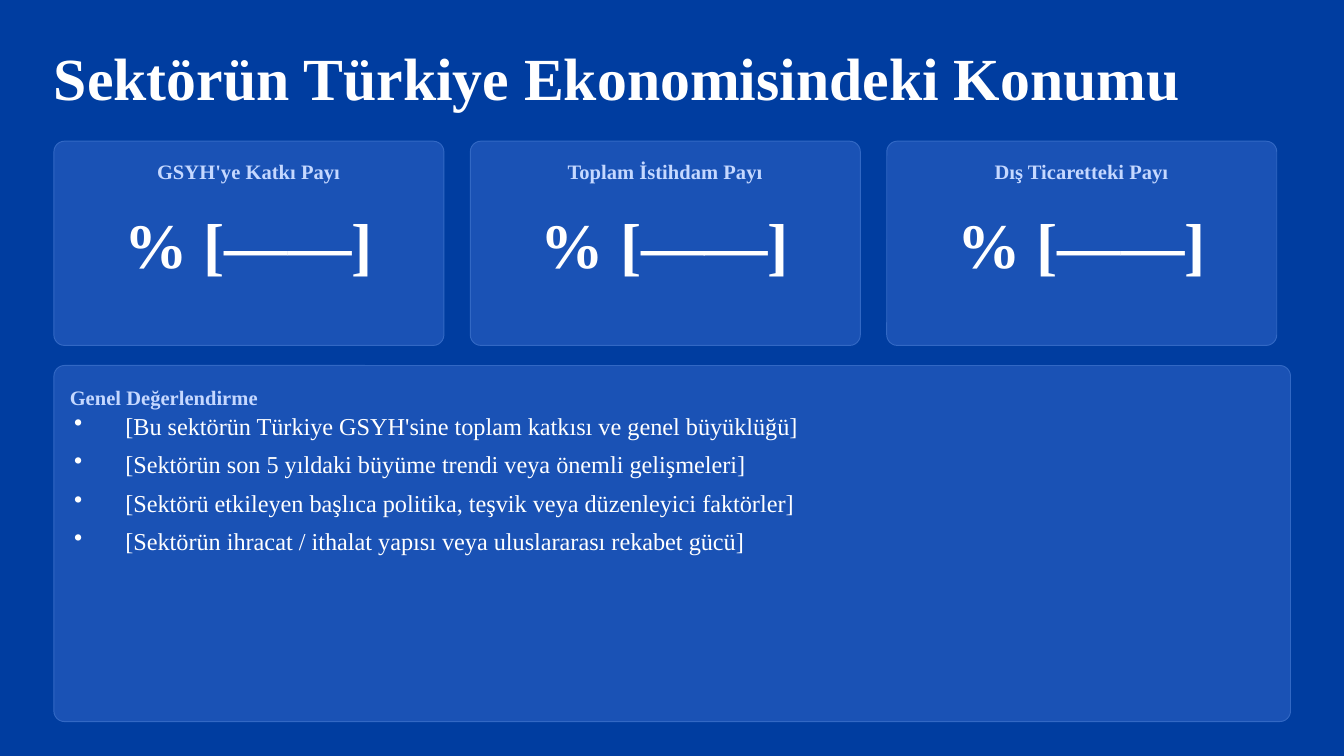
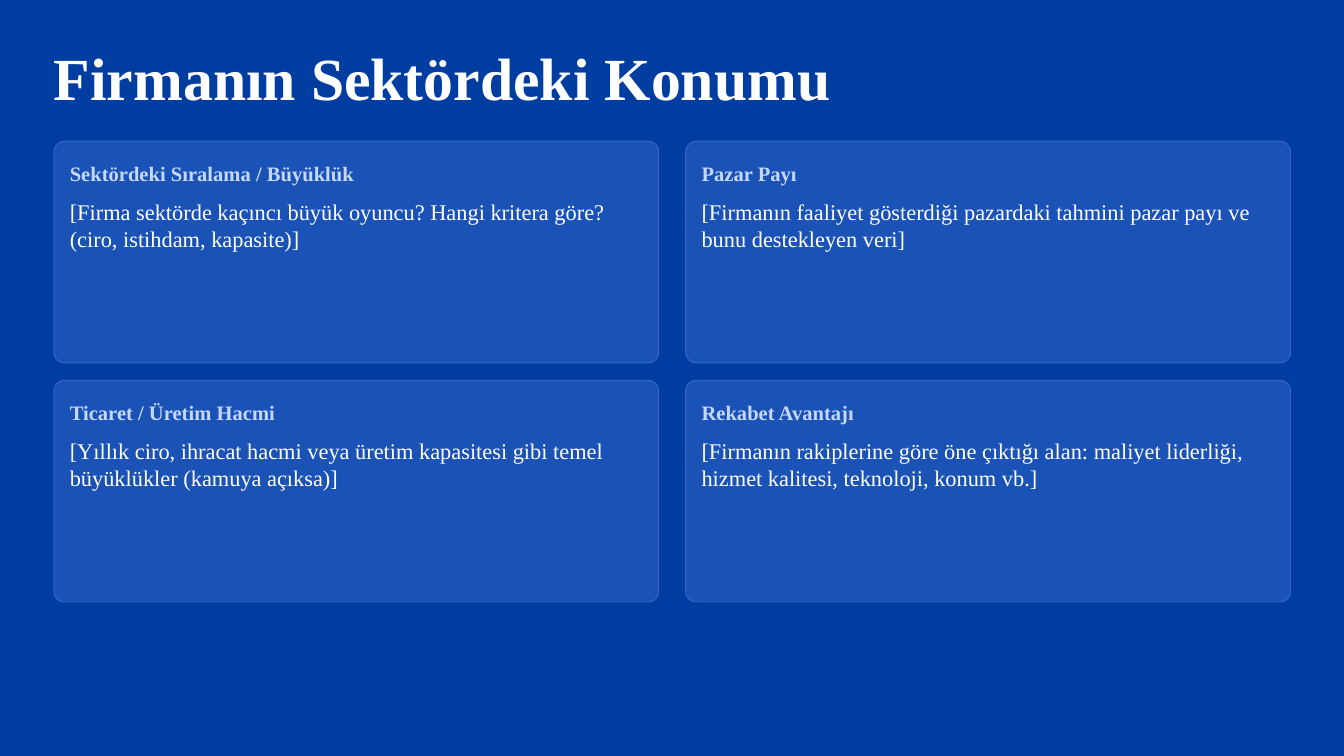
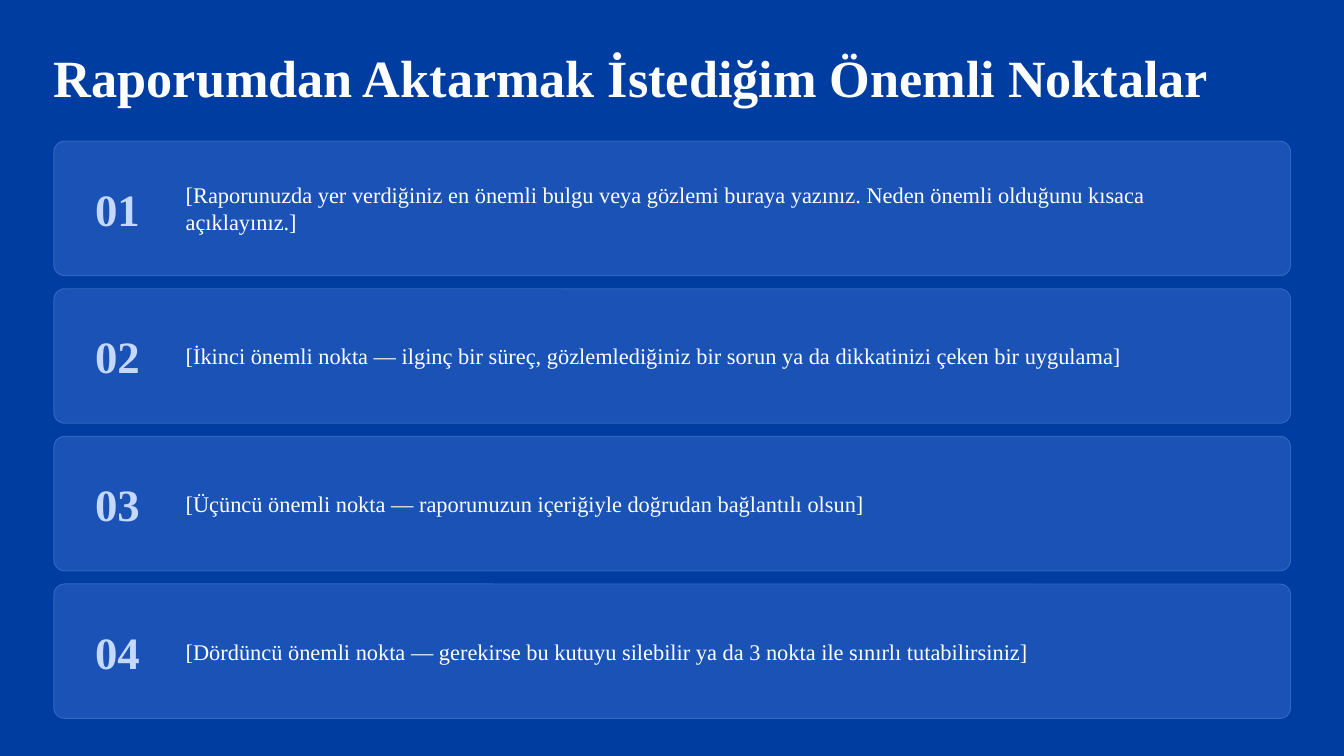
import pptx
import pptx.util
import pptx.dml.color
import pptx.enum.shapes
import pptx.enum.text
from lxml import etree

Cm, Pt = pptx.util.Cm, pptx.util.Pt
rgb = pptx.dml.color.RGBColor.from_string
ALIGN, ANCHOR = pptx.enum.text.PP_ALIGN, pptx.enum.text.MSO_ANCHOR
LEFT, CENTER = ALIGN.LEFT, ALIGN.CENTER
TOP, MIDDLE = ANCHOR.TOP, ANCHOR.MIDDLE

# Shared look, lengths in cm
BLUE, PANEL, EDGE = "003DA0", "1A52B5", "3268C4"
WHITE, PALE = "FFFFFF", "C5D8FF"
FONT = "Times New Roman"
MARGIN, FULL_W, CARD_TOP, RADIUS = 1.02, 23.37, 2.67, 0.2


def write(sp, box, lines, size, color=WHITE, bold=False, align=LEFT, anchor=MIDDLE):
    """Place a text shape and fill it, one paragraph per line."""
    sp.left, sp.top, sp.width, sp.height = map(Cm, box)
    tf = sp.text_frame
    frame = {"word_wrap": True, "vertical_anchor": anchor,
             "auto_size": pptx.enum.text.MSO_AUTO_SIZE.NONE,
             "margin_left": 0, "margin_right": 0, "margin_top": 0, "margin_bottom": 0}
    for name, value in frame.items():
        setattr(tf, name, value)
    for i, line in enumerate(lines):
        p = tf.paragraphs[0] if i == 0 else tf.add_paragraph()
        p.alignment = align
        r = p.add_run()
        r.text = line
        for name, value in {"name": FONT, "size": Pt(size), "bold": bold}.items():
            setattr(r.font, name, value)
        r.font.color.rgb = rgb(color)
    return tf


def add_card(s, x, y, w, h, heading=None):
    """Draw a rounded panel, with a heading at its top left if given."""
    sp = s.shapes.add_shape(pptx.enum.shapes.MSO_SHAPE.ROUNDED_RECTANGLE,
                            Cm(x), Cm(y), Cm(w), Cm(h))
    sp.adjustments[0] = RADIUS / min(w, h)
    sp.shadow.inherit = False
    sp.fill.solid()
    sp.fill.fore_color.rgb = rgb(PANEL)
    sp.line.color.rgb = rgb(EDGE)
    sp.line.width = Pt(0.5)
    if heading:
        write(s.shapes.add_textbox(0, 0, 0, 0), (x + 0.3, y + 0.25, w - 0.6, 0.71),
              [heading], 11, PALE, True)


prs = pptx.Presentation()
prs.slide_width, prs.slide_height = Cm(25.4), Cm(14.29)
bg = prs.slide_master.background.fill
bg.solid()
bg.fore_color.rgb = rgb(BLUE)

# Titled slides
titles = [("Sektörün Türkiye Ekonomisindeki Konumu", 32),
          ("Firmanın Sektördeki Konumu", 32),
          ("Raporumdan Aktarmak İstediğim Önemli Noktalar", 28)]
slides = []
for title, size in titles:
    s = prs.slides.add_slide(prs.slide_layouts[5])
    write(s.shapes.title, (MARGIN, 0.56, FULL_W, 1.78), [title], size, bold=True)
    slides.append(s)
economy, firm, findings = slides

# Slide 1: three key figures
shares = ["GSYH'ye Katkı Payı", "Toplam İstihdam Payı", "Dış Ticaretteki Payı"]
for i, label in enumerate(shares):
    x = MARGIN + i * 7.87
    add_card(economy, x, CARD_TOP, 7.37, 3.86)
    write(economy.shapes.add_textbox(0, 0, 0, 0), (x + 0.25, 2.79, 6.86, 0.89),
          [label], 11, PALE, True, CENTER)
    write(economy.shapes.add_textbox(0, 0, 0, 0), (x + 0.25, 3.68, 6.86, 1.83),
          ["% [——]"], 34, WHITE, True, CENTER)

# Slide 1: general assessment
add_card(economy, MARGIN, 6.91, FULL_W, 6.73, "Genel Değerlendirme")
tf = write(economy.shapes.add_textbox(0, 0, 0, 0), (1.4, 7.77, 22.61, 5.59), [
    "[Bu sektörün Türkiye GSYH'sine toplam katkısı ve genel büyüklüğü]",
    "[Sektörün son 5 yıldaki büyüme trendi veya önemli gelişmeleri]",
    "[Sektörü etkileyen başlıca politika, teşvik veya düzenleyici faktörler]",
    "[Sektörün ihracat / ithalat yapısı veya uluslararası rekabet gücü]",
], 13, anchor=TOP)
indent = Cm(0.97)
for p in tf.paragraphs:
    p.space_after = Pt(5)
    pPr = p._p.get_or_add_pPr()
    pPr.set("marL", str(indent))
    pPr.set("indent", str(-indent))
    bullet = etree.SubElement(pPr, pptx.oxml.ns.qn("a:buChar"))
    bullet.set("char", "•")

# Slide 2: two by two cards
topics = [
    ("Sektördeki Sıralama / Büyüklük",
     "[Firma sektörde kaçıncı büyük oyuncu? Hangi kritera göre? (ciro, istihdam, kapasite)]"),
    ("Pazar Payı",
     "[Firmanın faaliyet gösterdiği pazardaki tahmini pazar payı ve bunu destekleyen veri]"),
    ("Ticaret / Üretim Hacmi",
     "[Yıllık ciro, ihracat hacmi veya üretim kapasitesi gibi temel büyüklükler (kamuya açıksa)]"),
    ("Rekabet Avantajı",
     "[Firmanın rakiplerine göre öne çıktığı alan: maliyet liderliği, hizmet kalitesi, "
     "teknoloji, konum vb.]"),
]
for i, (heading, body) in enumerate(topics):
    row, col = divmod(i, 2)
    x, y = MARGIN + col * 11.94, CARD_TOP + row * 4.52
    add_card(firm, x, y, 11.43, 4.19, heading)
    write(firm.shapes.add_textbox(0, 0, 0, 0), (x + 0.3, y + 1.07, 10.83, 2.87),
          [body], 12, anchor=TOP)

# Slide 3: numbered points
points = [
    "[Raporunuzda yer verdiğiniz en önemli bulgu veya gözlemi buraya yazınız. "
    "Neden önemli olduğunu kısaca açıklayınız.]",
    "[İkinci önemli nokta — ilginç bir süreç, gözlemlediğiniz bir sorun ya da "
    "dikkatinizi çeken bir uygulama]",
    "[Üçüncü önemli nokta — raporunuzun içeriğiyle doğrudan bağlantılı olsun]",
    "[Dördüncü önemli nokta — gerekirse bu kutuyu silebilir ya da 3 nokta ile "
    "sınırlı tutabilirsiniz]",
]
for i, point in enumerate(points):
    y = CARD_TOP + i * 2.79
    add_card(findings, MARGIN, y, FULL_W, 2.54)
    write(findings.shapes.add_textbox(0, 0, 0, 0), (1.27, y + 0.15, 1.9, 2.24),
          [f"{i + 1:02}"], 24, PALE, True, CENTER)
    write(findings.shapes.add_textbox(0, 0, 0, 0), (3.51, y + 0.23, 20.32, 2.08),
          [point], 12)

prs.save("out.pptx")
